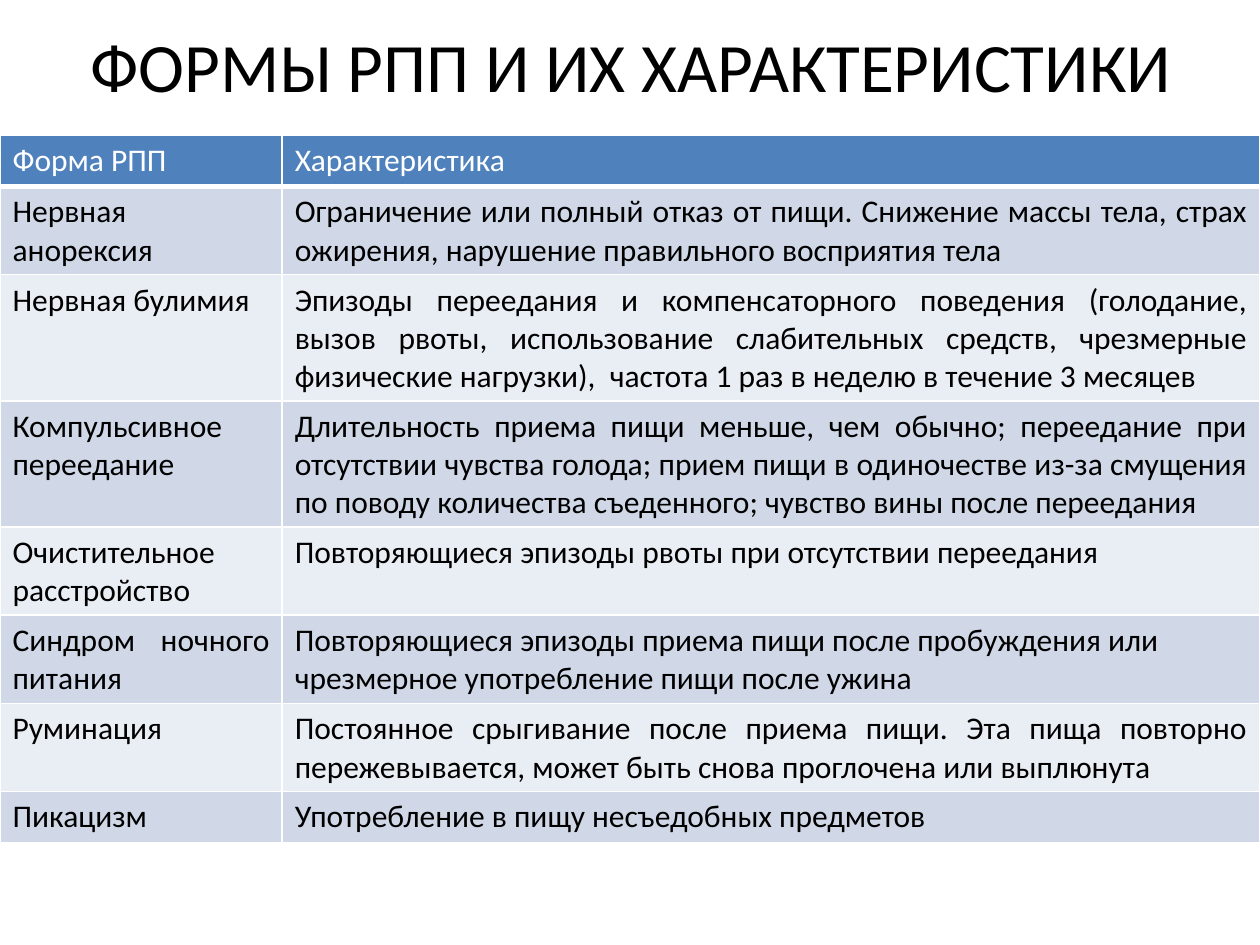
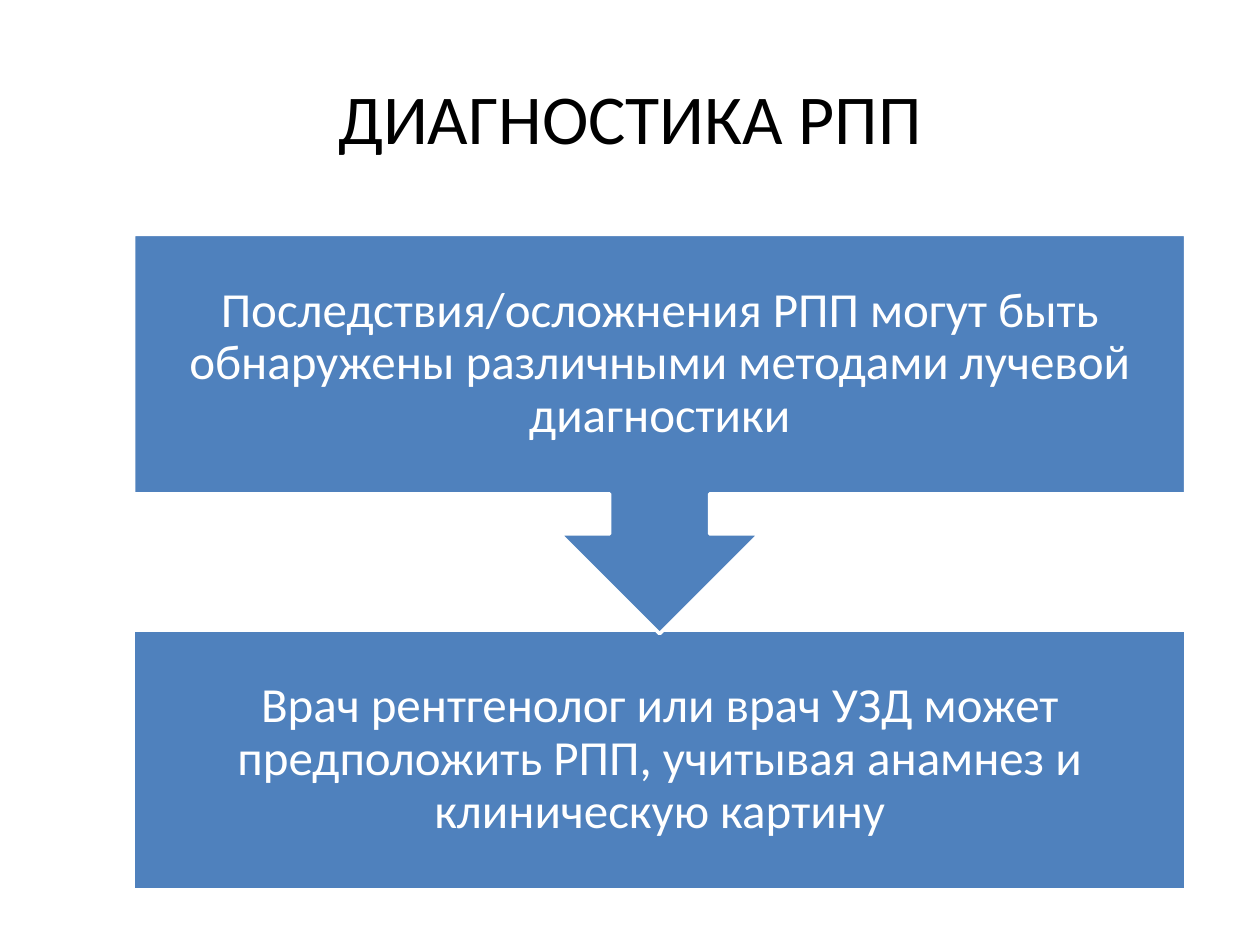
from lxml import etree
from pptx import Presentation
from pptx.dml.color import RGBColor
from pptx.enum.shapes import MSO_SHAPE as Shape
from pptx.enum.text import MSO_ANCHOR as Anchor, PP_ALIGN as Align
from pptx.oxml.ns import qn
from pptx.util import Inches, Pt

BLACK = RGBColor(0x00, 0x00, 0x00)
WHITE = RGBColor(0xFF, 0xFF, 0xFF)
BLUE = RGBColor(0x4F, 0x81, 0xBD)
DARK_BAND = RGBColor(0xD0, 0xD8, 0xE8)
LIGHT_BAND = RGBColor(0xE9, 0xED, 0xF4)
FONT = "Calibri"

COLUMN_WIDTHS = (2.24, 7.76)
ROW_HEIGHT = 0.41
LEFT_ALIGNED_CELL = (5, 1)
DISORDER_ROWS = [
    ("Форма РПП", "Характеристика"),
    ("Нервная анорексия",
     "Ограничение или полный отказ от пищи. Снижение массы тела, страх "
     "ожирения, нарушение правильного восприятия тела"),
    ("Нервная булимия",
     "Эпизоды переедания и компенсаторного поведения (голодание, вызов рвоты, "
     "использование слабительных средств, чрезмерные физические нагрузки),  "
     "частота 1 раз в неделю в течение 3 месяцев"),
    ("Компульсивное переедание",
     "Длительность приема пищи меньше, чем обычно; переедание при отсутствии "
     "чувства голода; прием пищи в одиночестве из-за смущения по поводу "
     "количества съеденного; чувство вины после переедания"),
    ("Очистительное расстройство",
     "Повторяющиеся эпизоды рвоты при отсутствии переедания"),
    ("Синдром ночного питания",
     "Повторяющиеся эпизоды приема пищи после пробуждения или чрезмерное "
     "употребление пищи после ужина"),
    ("Руминация",
     "Постоянное срыгивание после приема пищи. Эта пища повторно "
     "пережевывается, может быть снова проглочена или выплюнута"),
    ("Пикацизм", "Употребление в пищу несъедобных предметов"),
]


def write(frame, text, size, color, align):
    para = frame.paragraphs[0]
    para.alignment = align
    span = para.add_run()
    span.text = text
    span.font.name = FONT
    span.font.size = Pt(size)
    span.font.bold = False
    span.font.color.rgb = color
    return para


def add_title(page, text, left, top, size):
    box = page.shapes.add_textbox(Inches(left), Inches(top), Inches(9), Inches(1.25))
    frame = box.text_frame
    frame.word_wrap = True
    frame.vertical_anchor = Anchor.MIDDLE
    write(frame, text, size, BLACK, Align.CENTER)


def set_borders(cell, top, bottom):
    """Draw white cell borders; top and bottom are widths in points."""
    properties = cell._tc.get_or_add_tcPr()
    widths = {"a:lnL": 1, "a:lnR": 1, "a:lnT": top, "a:lnB": bottom}
    for index, (tag, width) in enumerate(widths.items()):
        line = etree.Element(qn(tag), w=str(Pt(width)))
        fill = etree.SubElement(line, qn("a:solidFill"))
        etree.SubElement(fill, qn("a:srgbClr"), val=str(WHITE))
        properties.insert(index, line)


def add_disorder_table(page):
    count = len(DISORDER_ROWS)
    table = page.shapes.add_table(
        count, len(COLUMN_WIDTHS), Inches(0), Inches(1.07),
        Inches(sum(COLUMN_WIDTHS)), Inches(ROW_HEIGHT * count)).table
    for column, width in zip(table.columns, COLUMN_WIDTHS):
        column.width = Inches(width)
    for row, texts in enumerate(DISORDER_ROWS):
        table.rows[row].height = Inches(ROW_HEIGHT)
        band = BLUE if row == 0 else DARK_BAND if row % 2 else LIGHT_BAND
        for column, text in enumerate(texts):
            cell = table.cell(row, column)
            cell.fill.solid()
            cell.fill.fore_color.rgb = band
            set_borders(cell, top=3 if row == 1 else 1, bottom=3 if row == 0 else 1)
            align = Align.LEFT if (row, column) == LEFT_ALIGNED_CELL else Align.JUSTIFY
            write(cell.text_frame, text, 18, BLACK if row else WHITE, align)


def add_step(page, kind, top, height, text):
    step = page.shapes.add_shape(
        kind, Inches(1.06), Inches(top), Inches(8.35), Inches(height))
    step.shadow.inherit = False
    step.fill.solid()
    step.fill.fore_color.rgb = BLUE
    step.line.color.rgb = WHITE
    step.line.width = Pt(2)
    frame = step.text_frame
    frame.word_wrap = True
    frame.vertical_anchor = Anchor.MIDDLE
    frame.margin_left = frame.margin_right = Inches(0.22)
    frame.margin_top = frame.margin_bottom = Inches(0.22)
    para = write(frame, text, 28, WHITE, Align.CENTER)
    para.line_spacing = 0.9


def main():
    deck = Presentation()
    deck.slide_width, deck.slide_height = Inches(10), Inches(7.5)
    blank = deck.slide_layouts[6]

    page = deck.slides.add_slide(blank)
    add_title(page, "ФОРМЫ РПП И ИХ ХАРАКТЕРИСТИКИ", 0.51, -0.11, 39.6)
    add_disorder_table(page)

    page = deck.slides.add_slide(blank)
    add_title(page, "ДИАГНОСТИКА РПП", 0.5, 0.3, 40)
    add_step(page, Shape.RECTANGLE, 5, 2.06,
             "Врач рентгенолог или врач УЗД может предположить РПП, "
             "учитывая анамнез и клиническую картину")
    add_step(page, Shape.DOWN_ARROW_CALLOUT, 1.86, 3.17,
             "Последствия/осложнения РПП могут быть обнаружены "
             "различными методами лучевой диагностики")

    deck.save("out.pptx")


if __name__ == "__main__":
    main()
